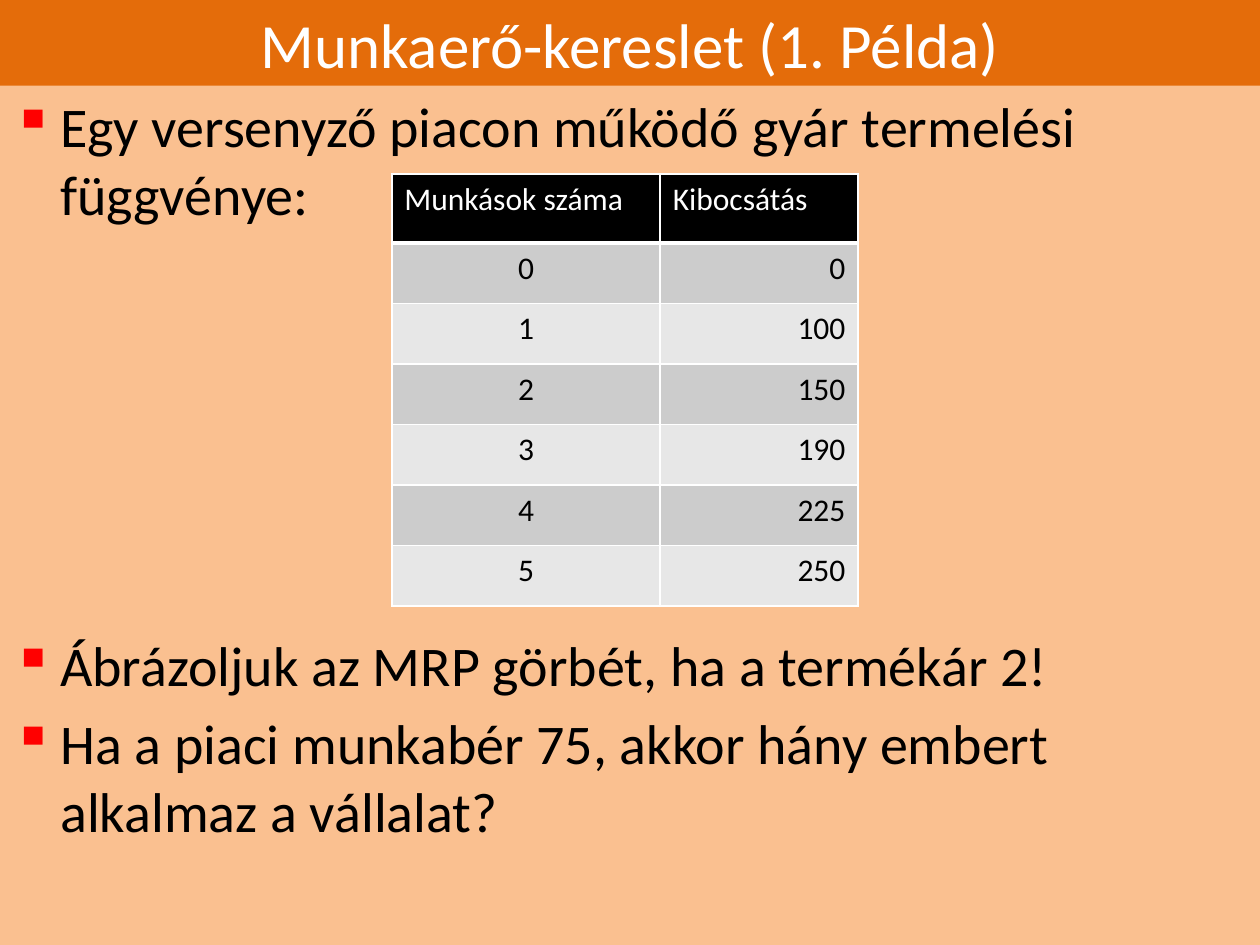
"""Builds a labour demand example slide with a production table."""
from typing import NamedTuple

from lxml.etree import SubElement
from pptx import Presentation
from pptx.dml.color import RGBColor
from pptx.enum.shapes import MSO_SHAPE as Shape
from pptx.enum.text import MSO_ANCHOR as Anchor, PP_ALIGN as Align
from pptx.oxml.ns import qn
from pptx.util import Inches, Pt

FONT = "Calibri"
BLACK, WHITE, RED = "000000", "FFFFFF", "FF0000"
ORANGE, PEACH = "E46C0A", "FAC090"
BANDS = ("CCCCCC", "E7E7E7")
SIDES = ("lnL", "lnR", "lnT", "lnB")


class Bullet(NamedTuple):
    text: str
    space_before: float


class Output(NamedTuple):
    workers: str
    quantity: str


BULLETS = [
    Bullet("Egy versenyző piacon működő gyár termelési függvénye:", 0),
    Bullet("Ábrázoljuk az MRP görbét, ha a termékár 2!", 231),
    Bullet("Ha a piaci munkabér 75, akkor hány embert alkalmaz a vállalat?", 6.4),
]
HEADER = Output("Munkások száma", "Kibocsátás")
OUTPUTS = [
    Output("0", "0"),
    Output("1", "100"),
    Output("2", "150"),
    Output("3", "190"),
    Output("4", "225"),
    Output("5", "250"),
]


def rgb(value: str) -> RGBColor:
    return RGBColor.from_string(value)


def paint(fill, color: str) -> None:
    fill.solid()
    fill.fore_color.rgb = rgb(color)


def write(paragraph, text: str, size: float, color: str, align=Align.LEFT) -> None:
    paragraph.alignment = align
    run = paragraph.add_run()
    run.text = text
    run.font.name = FONT
    run.font.size = Pt(size)
    run.font.color.rgb = rgb(color)


def add_title(slide, text: str) -> None:
    banner = slide.shapes.add_shape(Shape.RECTANGLE, 0, 0, Inches(10), Inches(0.68))
    banner.shadow.inherit = False
    paint(banner.fill, ORANGE)
    banner.line.fill.background()
    banner.text_frame.word_wrap = True
    banner.text_frame.vertical_anchor = Anchor.MIDDLE
    write(banner.text_frame.paragraphs[0], text, 36, WHITE, Align.CENTER)


def add_marker(paragraph) -> None:
    properties = paragraph._p.get_or_add_pPr()
    properties.set("marL", str(Inches(0.38)))
    properties.set("indent", str(-Inches(0.38)))
    color = SubElement(properties, qn("a:buClr"))
    SubElement(color, qn("a:srgbClr"), val=RED)
    SubElement(properties, qn("a:buChar"), char="▪")


def add_bullets(slide, bullets: list[Bullet]) -> None:
    body = slide.shapes.add_textbox(0, Inches(0.68), Inches(10), Inches(6.82))
    frame = body.text_frame
    frame.word_wrap = True
    for index, bullet in enumerate(bullets):
        paragraph = frame.add_paragraph() if index else frame.paragraphs[0]
        paragraph.space_before = Pt(bullet.space_before)
        add_marker(paragraph)
        write(paragraph, bullet.text, 32, BLACK)


def set_borders(cell, bottom: float) -> None:
    properties = cell._tc.get_or_add_tcPr()
    for position, side in enumerate(SIDES):
        width = Pt(bottom if side == "lnB" else 1)
        border = properties.makeelement(qn(f"a:{side}"), {"w": str(width)})
        fill = SubElement(border, qn("a:solidFill"))
        SubElement(fill, qn("a:srgbClr"), val=WHITE)
        properties.insert(position, border)


def fill_row(table, row: int, output: Output, aligns, fill: str, color: str, bottom: float) -> None:
    for column, (text, align) in enumerate(zip(output, aligns)):
        cell = table.cell(row, column)
        paint(cell.fill, fill)
        set_borders(cell, bottom)
        write(cell.text_frame.paragraphs[0], text, 18, color, align)


def add_output_table(slide, header: Output, outputs: list[Output]) -> None:
    table = slide.shapes.add_table(
        len(outputs) + 1, 2, Inches(3.11), Inches(1.38), Inches(3.7), Inches(3.43)
    ).table
    for column, width in zip(table.columns, (2.13, 1.57)):
        column.width = Inches(width)
    for index, row in enumerate(table.rows):
        row.height = Inches(0.48 if index else 0.55)
    fill_row(table, 0, header, (Align.LEFT, Align.LEFT), BLACK, WHITE, 3)
    for index, output in enumerate(outputs):
        fill_row(table, index + 1, output, (Align.CENTER, Align.RIGHT), BANDS[index % 2], BLACK, 1)


def main() -> None:
    deck = Presentation()
    deck.slide_width, deck.slide_height = Inches(10), Inches(7.5)
    slide = deck.slides.add_slide(deck.slide_layouts[6])
    paint(slide.background.fill, PEACH)
    add_title(slide, "Munkaerő-kereslet (1. Példa)")
    add_bullets(slide, BULLETS)
    add_output_table(slide, HEADER, OUTPUTS)
    deck.save("out.pptx")


if __name__ == "__main__":
    main()
